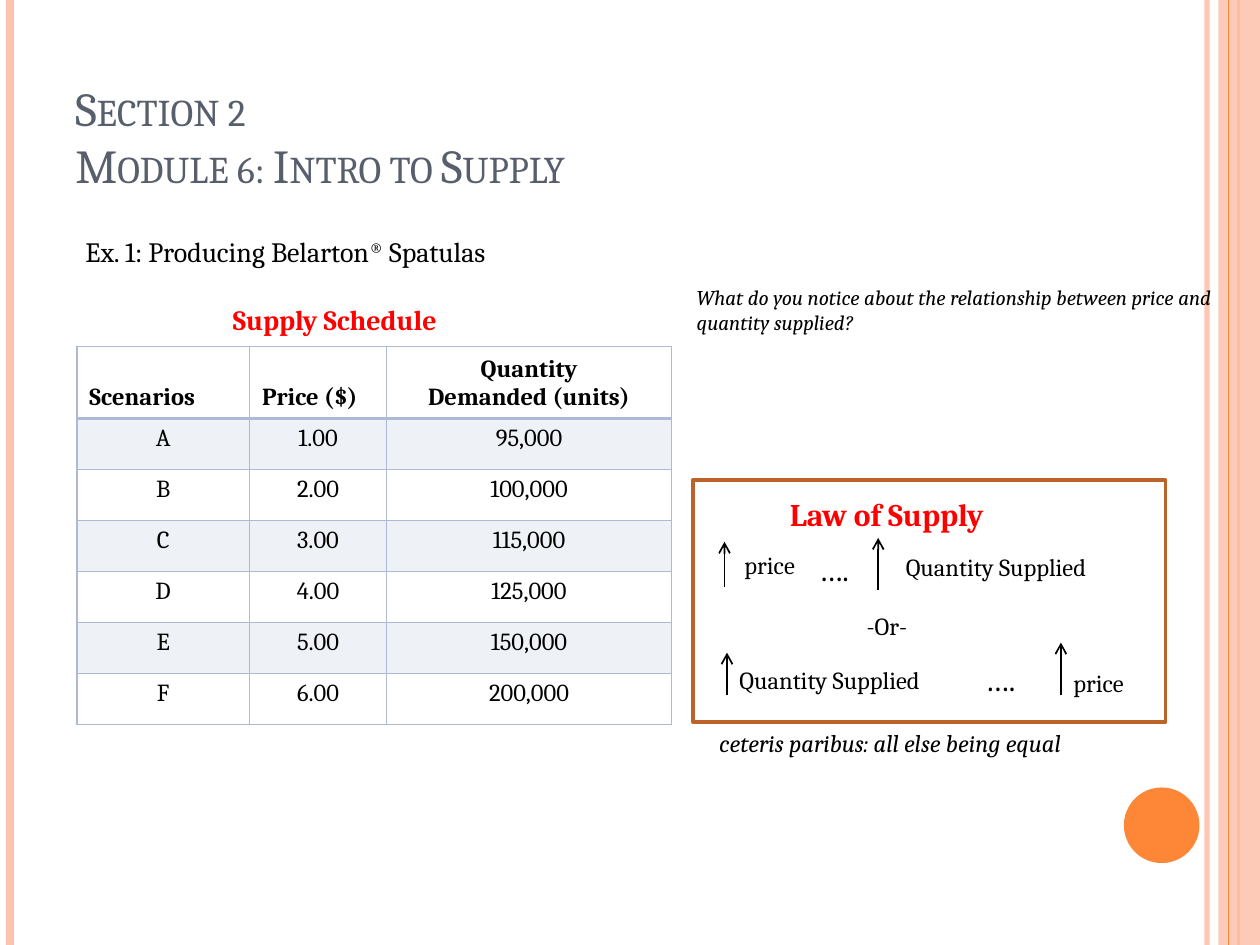
"""Builds the Intro to Supply slide with its schedule table and law of supply panel."""
from lxml.etree import SubElement
from pptx import Presentation
from pptx.dml.color import RGBColor
from pptx.enum.shapes import MSO_CONNECTOR as Link, MSO_SHAPE as Shape
from pptx.enum.text import MSO_ANCHOR as Anchor, PP_ALIGN as Align
from pptx.oxml.ns import qn
from pptx.util import Inches, Pt

FONT = "Cambria"
BLACK = RGBColor(0x00, 0x00, 0x00)
RED = RGBColor(0xFF, 0x00, 0x00)
SLATE = RGBColor(0x57, 0x5F, 0x6D)
PEACH = RGBColor(0xFE, 0xC3, 0xAE)
ORANGE = RGBColor(0xFE, 0x86, 0x37)
RUST = RGBColor(0xBC, 0x63, 0x29)
PERIWINKLE = RGBColor(0xAE, 0xBA, 0xD5)

TITLE = ["Section 2", "Module 6: Intro to Supply"]
EXAMPLE = [("Ex. 1: Producing Belarton", {}), ("®", {"baseline": "30000"}), (" Spatulas", {})]
QUESTION = "What do you notice about the relationship between price and quantity supplied?"

HEADERS = [("Scenarios", Align.LEFT), ("Price ($)", Align.LEFT),
           ("Quantity\nDemanded (units)", Align.CENTER)]
SCHEDULE = [("A", "1.00", "95,000"), ("B", "2.00", "100,000"), ("C", "3.00", "115,000"),
            ("D", "4.00", "125,000"), ("E", "5.00", "150,000"), ("F", "6.00", "200,000")]
COLUMN_WIDTHS = [1.37, 1.09, 2.26]
TABLE_HEIGHT, HEADER_HEIGHT = 3, 0.57

HEADINGS = [("Supply Schedule", 1.75, 2.35, 2.15, 0.37, 16),
            ("Law of Supply", 6.17, 3.88, 2.08, 0.4, 18)]
LAW_LABELS = [("price", 5.81, 4.32, 0.65, 14), ("….", 6.4, 4.32, 0.52, 18),
              ("Quantity Supplied", 7.09, 4.33, 1.88, 14),
              ("Quantity Supplied", 5.77, 5.23, 1.88, 14),
              ("price", 8.42, 5.25, 0.65, 14), ("….", 7.72, 5.19, 0.52, 18),
              ("-Or-", 6.78, 4.8, 0.57, 14)]
UP_ARROWS = [(5.75, 4.66, 4.3), (6.97, 4.68, 4.27), (5.77, 5.52, 5.18), (8.42, 5.52, 5.1)]


def set_alpha(element, percent):
    for color in element.iter(qn("a:srgbClr")):
        SubElement(color, qn("a:alpha")).set("val", str(percent * 1000))


def add_run(para, text, size, color=BLACK, bold=False, italic=False, **extras):
    span = para.add_run()
    span.text = text
    span.font.name, span.font.size = FONT, Pt(size)
    span.font.bold, span.font.italic = bold, italic
    span.font.color.rgb = color
    for name, value in extras.items():
        span.font._element.set(name, value)


def add_box(slide, left, top, width, height, wrap=False):
    box = slide.shapes.add_textbox(Inches(left), Inches(top), Inches(width), Inches(height))
    box.text_frame.word_wrap = wrap
    return box.text_frame


def add_label(slide, text, left, top, width, height, size, wrap=False, **style):
    frame = add_box(slide, left, top, width, height, wrap)
    add_run(frame.paragraphs[0], text, size, **style)


def add_vertical(slide, x, start, end, color, width, arrow=False):
    line = slide.shapes.add_connector(
        Link.STRAIGHT, Inches(x), Inches(start), Inches(x), Inches(end))
    line.line.color.rgb, line.line.width = color, Pt(width)
    if arrow:
        SubElement(line.line._get_or_add_ln(), qn("a:tailEnd")).set("type", "arrow")
    SubElement(line._element.spPr, qn("a:effectLst"))
    return line


def add_plain_shape(slide, kind, left, top, width, height, fill=None, outline=None):
    shape = slide.shapes.add_shape(
        kind, Inches(left), Inches(top), Inches(width), Inches(height))
    shape.shadow.inherit = False
    if fill is None:
        shape.fill.background()
    else:
        shape.fill.solid()
        shape.fill.fore_color.rgb = fill
    if outline is None:
        shape.line.fill.background()
    else:
        shape.line.color.rgb, shape.line.width = outline, Pt(2)
    return shape


def add_borders(cell, bottom, top):
    properties = cell._tc.get_or_add_tcPr()
    for side, width in (("L", 1), ("R", 1), ("T", top), ("B", bottom)):
        border = SubElement(properties, qn(f"a:ln{side}"), w=str(Pt(width)))
        fill = SubElement(border, qn("a:solidFill"))
        SubElement(fill, qn("a:srgbClr"), val=str(PERIWINKLE))


def fill_cell(cell, text, align, row):
    header = row == 0
    add_borders(cell, bottom=2 if header else 1, top=2 if row == 1 else 1)
    cell.vertical_anchor = Anchor.BOTTOM if header else Anchor.TOP
    if row % 2:
        cell.fill.solid()
        cell.fill.fore_color.rgb = PERIWINKLE
        set_alpha(cell._tc.tcPr.find(qn("a:solidFill")), 20)
    else:
        cell.fill.background()
    frame = cell.text_frame
    for number, line in enumerate(text.split("\n")):
        para = frame.add_paragraph() if number else frame.paragraphs[0]
        para.alignment = align
        add_run(para, line, 14, bold=header)


def add_schedule(slide):
    rows = [HEADERS] + [[(text, Align.CENTER) for text in row] for row in SCHEDULE]
    table = slide.shapes.add_table(
        len(rows), len(HEADERS), Inches(0.61), Inches(2.75),
        Inches(sum(COLUMN_WIDTHS)), Inches(TABLE_HEIGHT)).table
    table.first_row = table.horz_banding = False
    for column, width in zip(table.columns, COLUMN_WIDTHS):
        column.width = Inches(width)
    body_height = (TABLE_HEIGHT - HEADER_HEIGHT) / len(SCHEDULE)
    for row, entries in enumerate(rows):
        table.rows[row].height = Inches(body_height if row else HEADER_HEIGHT)
        for column, (text, align) in enumerate(entries):
            fill_cell(table.cell(row, column), text, align, row)


def add_frame_decor(slide):
    rail = add_vertical(slide, 9.58, 0, 7.5, PEACH, 3)
    set_alpha(rail._element.spPr, 93)
    add_vertical(slide, 0.08, 0, 7.5, PEACH, 4.5)
    add_vertical(slide, 9.83, 0, 7.5, ORANGE, 1.5)
    band = add_plain_shape(slide, Shape.RECTANGLE, 9.67, 0, 0.33, 7.5, fill=PEACH)
    set_alpha(band._element.spPr, 87)
    add_vertical(slide, 9.75, 0, 7.5, ORANGE, 0.75)
    add_plain_shape(slide, Shape.OVAL, 8.92, 6.25, 0.6, 0.6, fill=ORANGE)


def main():
    deck = Presentation()
    deck.slide_width, deck.slide_height = Inches(10), Inches(7.5)
    slide = deck.slides.add_slide(deck.slide_layouts[6])
    add_frame_decor(slide)

    title = add_box(slide, 0.5, 0.33, 8.17, 1.25, wrap=True)
    title.vertical_anchor = Anchor.BOTTOM
    for number, line in enumerate(TITLE):
        para = title.add_paragraph() if number else title.paragraphs[0]
        add_run(para, line, 27, SLATE, cap="small")

    example = add_box(slide, 0.58, 1.81, 4.19, 0.37)
    for text, extras in EXAMPLE:
        add_run(example.paragraphs[0], text, 16, **extras)

    add_schedule(slide)
    add_label(slide, QUESTION, 5.43, 2.21, 4.32, 0.5, 12, wrap=True, italic=True)
    for heading in HEADINGS:
        add_label(slide, *heading, color=RED, bold=True)
    for text, left, top, width, size in LAW_LABELS:
        add_label(slide, text, left, top, width, 0.4 if size == 18 else 0.34, size)
    for x, start, end in UP_ARROWS:
        add_vertical(slide, x, start, end, BLACK, 1, arrow=True)
    add_plain_shape(slide, Shape.RECTANGLE, 5.5, 3.81, 3.75, 1.92, outline=RUST)
    add_label(slide, "ceteris paribus: all else being equal",
              5.61, 5.73, 3.39, 0.34, 14, italic=True)
    deck.save("out.pptx")


if __name__ == "__main__":
    main()
